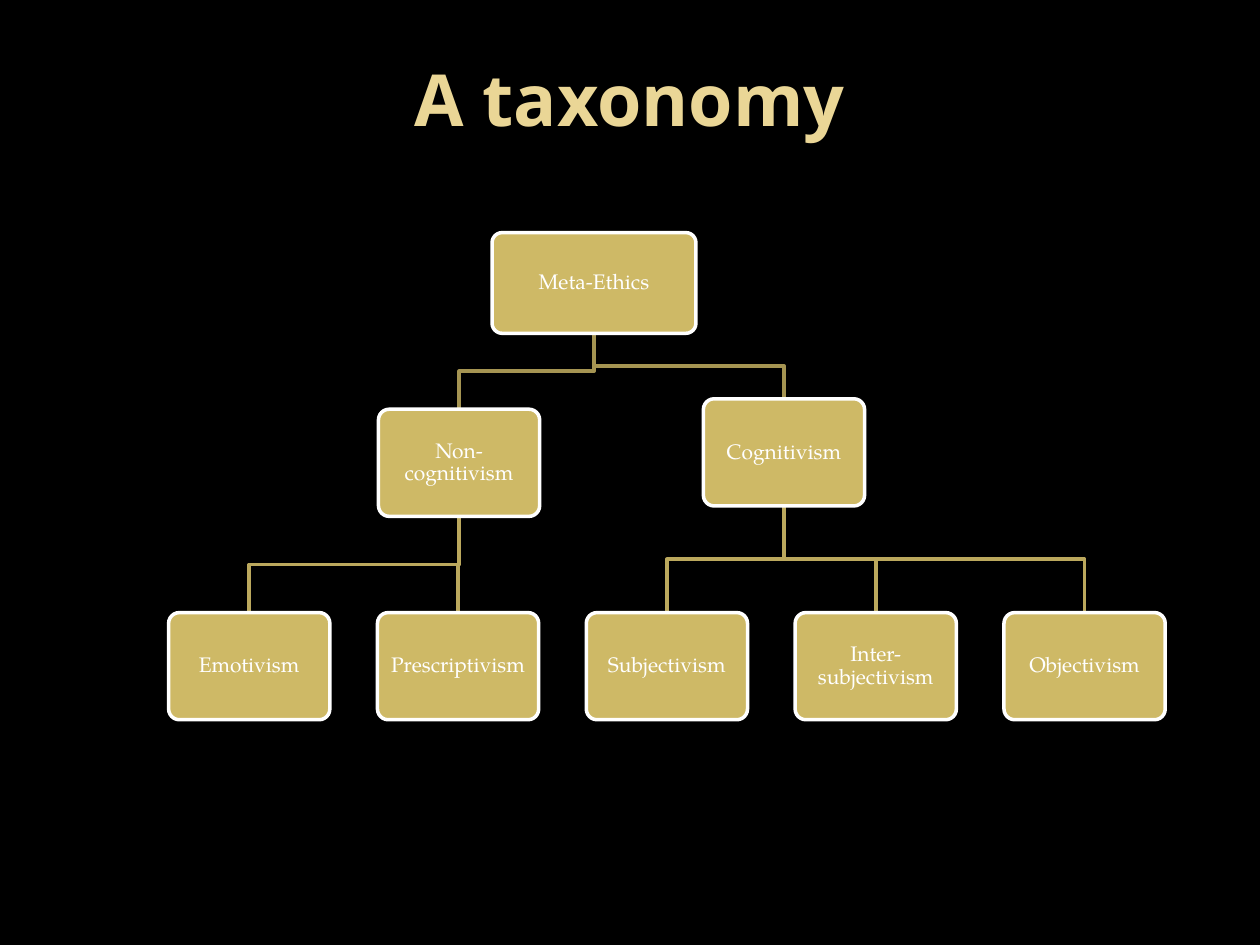
from dataclasses import dataclass

from pptx import Presentation
from pptx.dml.color import RGBColor
from pptx.enum.shapes import MSO_SHAPE as Preset
from pptx.enum.text import MSO_ANCHOR as Anchor, PP_ALIGN as Align
from pptx.slide import Slide
from pptx.text.text import TextFrame
from pptx.util import Cm, Pt

BLACK = RGBColor(0x00, 0x00, 0x00)
WHITE = RGBColor(0xFF, 0xFF, 0xFF)
GOLD = RGBColor(0xCE, 0xB9, 0x66)
PALE_GOLD = RGBColor(0xEA, 0xD6, 0x96)
UPPER_LINK = RGBColor(0xA5, 0x94, 0x52)
LOWER_LINK = RGBColor(0xBB, 0xA8, 0x5D)

TITLE_FONT = "Open Sans"
BODY_FONT = "TeX Gyre Pagella"
LEAF_LEFT, LEAF_TOP, LEAF_STEP = 3.4, 12.35, 4.21
INSET = Cm(0.13)


@dataclass(frozen=True)
class Node:
    """A box of the tree, measured in centimetres."""
    label: str
    left: float
    top: float
    width: float = 3.25
    height: float = 2.16

    @property
    def middle(self) -> float:
        return self.left + self.width / 2

    @property
    def bottom(self) -> float:
        return self.top + self.height


@dataclass(frozen=True)
class Branch:
    parent: Node
    children: list[Node]
    color: RGBColor


ROOT = Node("Meta-Ethics", 9.92, 4.69, 4.11, 2.03)
NON_COGNITIVISM = Node("Non-cognitivism", 7.63, 8.25)
COGNITIVISM = Node("Cognitivism", 14.18, 8.04)
LEAVES = [
    Node(label, LEAF_LEFT + index * LEAF_STEP, LEAF_TOP)
    for index, label in enumerate(
        ["Emotivism", "Prescriptivism", "Subjectivism", "Inter-subjectivism", "Objectivism"]
    )
]
BRANCHES = [
    Branch(ROOT, [NON_COGNITIVISM, COGNITIVISM], UPPER_LINK),
    Branch(NON_COGNITIVISM, LEAVES[:2], LOWER_LINK),
    Branch(COGNITIVISM, LEAVES[2:], LOWER_LINK),
]


def write_centred(frame: TextFrame, text: str, font_name: str, size: float,
                  color: RGBColor, bold: bool = False) -> None:
    frame.text = text
    frame.word_wrap = True
    frame.vertical_anchor = Anchor.MIDDLE
    para = frame.paragraphs[0]
    para.alignment = Align.CENTER
    font = para.runs[0].font
    font.name, font.size, font.bold = font_name, Pt(size), bold
    font.color.rgb = color


def add_title(page: Slide, text: str) -> None:
    title = page.shapes.title
    title.left, title.top, title.width, title.height = Cm(1.27), Cm(0.76), Cm(22.86), Cm(2.41)
    write_centred(title.text_frame, text, TITLE_FONT, 41, PALE_GOLD, bold=True)


def add_link(page: Slide, parent: Node, child: Node, color: RGBColor) -> None:
    """Draw an elbow that turns halfway between the two boxes."""
    turn = (parent.bottom + child.top) / 2
    builder = page.shapes.build_freeform(Cm(parent.middle), Cm(parent.bottom))
    corners = [(parent.middle, turn), (child.middle, turn), (child.middle, child.top)]
    builder.add_line_segments([(Cm(x), Cm(y)) for x, y in corners], close=False)
    link = builder.convert_to_shape()
    link.shadow.inherit = False
    link.fill.background()
    link.line.color.rgb = color
    link.line.width = Pt(2)


def add_node(page: Slide, node: Node) -> None:
    box = page.shapes.add_shape(Preset.ROUNDED_RECTANGLE, Cm(node.left), Cm(node.top),
                                Cm(node.width), Cm(node.height))
    box.adjustments[0] = 0.1
    box.shadow.inherit = False
    box.fill.solid()
    box.fill.fore_color.rgb = GOLD
    box.line.color.rgb = WHITE
    box.line.width = Pt(2)
    frame = box.text_frame
    frame.margin_left = frame.margin_right = frame.margin_top = frame.margin_bottom = INSET
    write_centred(frame, node.label, BODY_FONT, 12, WHITE)
    frame.paragraphs[0].line_spacing = 0.9


def main() -> None:
    deck = Presentation()
    deck.slide_width, deck.slide_height = Cm(25.4), Cm(19.05)
    page = deck.slides.add_slide(deck.slide_layouts[5])
    page.background.fill.solid()
    page.background.fill.fore_color.rgb = BLACK

    add_title(page, "A taxonomy")
    for branch in BRANCHES:
        for child in branch.children:
            add_link(page, branch.parent, child, branch.color)
    for node in [ROOT, NON_COGNITIVISM, COGNITIVISM, *LEAVES]:
        add_node(page, node)
    deck.save("out.pptx")


if __name__ == "__main__":
    main()
